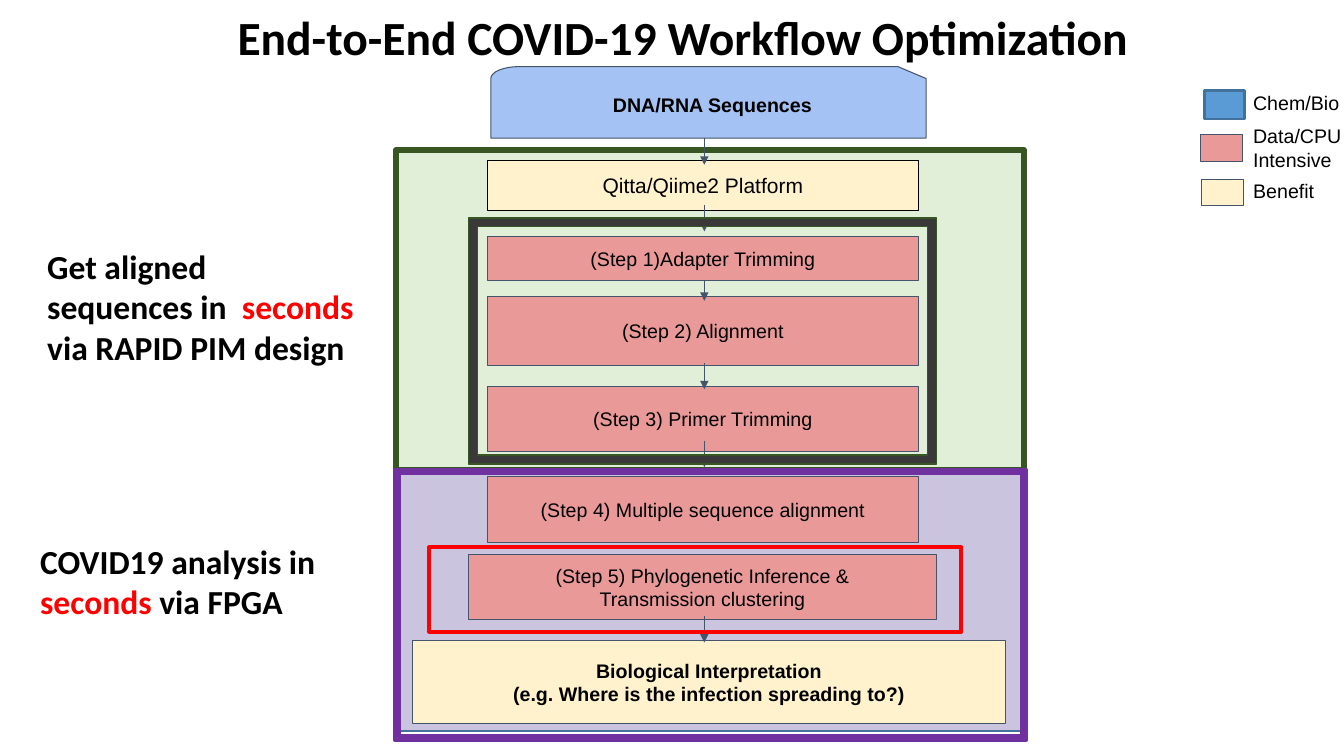
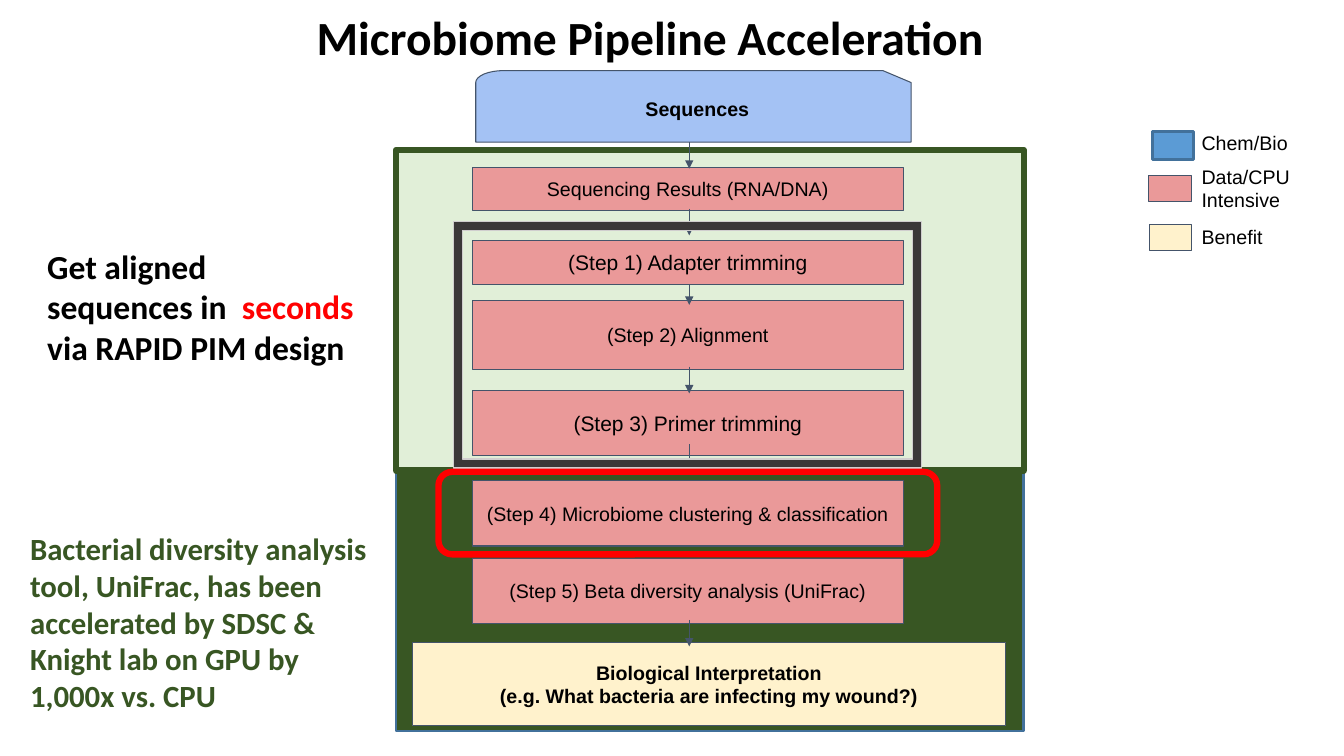
from dataclasses import dataclass
from math import cos, pi, sin

from lxml.etree import SubElement
from pptx import Presentation
from pptx.dml.color import RGBColor as Rgb
from pptx.enum.shapes import MSO_CONNECTOR as Link, MSO_SHAPE as Form
from pptx.enum.text import MSO_ANCHOR as Anchor, PP_ALIGN as Align
from pptx.oxml.ns import qn
from pptx.util import Cm, Pt


@dataclass(frozen=True)
class Theme:
    ink: str = "000000"
    red: str = "FF0000"
    edge: str = "44546A"
    blue: str = "5B9BD5"
    navy: str = "42719B"
    sky: str = "A4C2F4"
    rose: str = "EA9999"
    cream: str = "FFF2CC"
    mint: str = "E1EFD8"
    moss: str = "385623"
    lilac: str = "CBC4DE"
    plum: str = "7030A0"
    coal: str = "3A3838"
    ash: str = "D0CECE"
    head: str = "Calibri"
    body: str = "Arial"
    title: float = 34
    note: float = 24
    small: float = 22
    large: float = 15
    text: float = 14
    thin: float = 0.75


T = Theme()


@dataclass(frozen=True)
class Box:
    """Left, top, width and height in centimetres."""
    x: float
    y: float
    w: float
    h: float

    def move(self, dx: float, dy: float) -> "Box":
        return Box(self.x + dx, self.y + dy, self.w, self.h)

    def size(self) -> tuple[Cm, Cm, Cm, Cm]:
        return Cm(self.x), Cm(self.y), Cm(self.w), Cm(self.h)


@dataclass(frozen=True)
class Run:
    text: str
    tint: str = T.ink


@dataclass(frozen=True)
class Style:
    size: float = T.text
    font: str = T.body
    bold: bool = False
    align: Align = Align.CENTER
    anchor: Anchor = Anchor.MIDDLE
    pad: tuple[float, float, float, float] = (0.33, 0.33, 0.33, 0.33)
    lead: float = 1.0


@dataclass(frozen=True)
class Look:
    fill: str | None = T.rose
    line: str = T.edge
    width: float = T.thin


@dataclass(frozen=True)
class Step:
    box: Box
    text: str
    look: Look = Look()
    style: Style = Style()


@dataclass(frozen=True)
class Note:
    box: Box
    runs: tuple[Run, ...]
    size: float = T.note


@dataclass(frozen=True)
class Key:
    box: Box
    top: float
    text: str
    look: Look


@dataclass(frozen=True)
class Ring:
    box: Box
    form: Form
    look: Look
    bend: float | None = None


@dataclass(frozen=True)
class Flow:
    title: str
    span: float
    shift: tuple[float, float]
    card: str
    base: str
    steps: tuple[Step, ...]
    first: Step
    rings: tuple[Ring, ...]
    mark: Ring
    notes: tuple[Note, ...]
    move: tuple[float, float] = (0, 0)
    drop: float = 0


BOLD = Style(bold=True)
BIG = Style(size=T.large)
CREAM = Look(T.cream)
TITLE = Style(T.title, T.head, True, pad=(0.18,) * 4, lead=0.9)
LABEL = Style(align=Align.LEFT, anchor=Anchor.TOP, pad=(0.13, 0.13, 0, 0.13))
CARD = Style(bold=True, pad=(0.53, 0.46, 0.33, 0.33))

UPPER = Box(9.98, 3.78, 15.82, 8.08)
LOWER = Box(9.98, 11.89, 15.82, 6.53)
ARROWS = (3.48, 5.16, 6.91, 9.14, 11.1, 15.52)
KEYS = (
    Key(Box(30.35, 2.29, 1.02, 0.71), 2.16, "Chem/Bio", Look(T.blue, T.navy, 2)),
    Key(Box(30.25, 3.4, 1.07, 0.66), 3.0, "Data/CPU\nIntensive", Look()),
    Key(Box(30.27, 4.52, 1.07, 0.66), 4.39, "Benefit", CREAM),
)
SPEED = Note(Box(0.94, 6.07, 8.28, 2.26), (
    Run("Get aligned sequences in  "), Run("seconds ", T.red),
    Run("via RAPID PIM design")))


def row(top: float, high: float) -> Box:
    return Box(12.29, top, 10.85, high)


def trim(line: str) -> Ring:
    """Dark frame around the trimming and alignment steps."""
    return Ring(Box(11.81, 5.49, 11.79, 6.2), Form.FRAME,
                Look(T.coal, line, 1), 0.036)


def final(query: str) -> Step:
    return Step(Box(10.39, 16.13, 14.96, 2.11),
                f"Biological Interpretation\n(e.g. {query})", CREAM, BOLD)


FLOWS = (
    Flow(
        "End-to-End COVID-19 Workflow Optimization", 28.52, (0, 0),
        "DNA/RNA Sequences", T.lilac,
        (
            Step(row(4.04, 1.27), "Qitta/Qiime2 Platform", Look(T.cream, T.ink), BIG),
            Step(row(7.47, 1.75), "(Step 2) Alignment"),
            Step(row(9.73, 1.65), "(Step 3) Primer Trimming"),
            Step(row(12.01, 1.65), "(Step 4) Multiple sequence alignment"),
            Step(Box(11.81, 13.97, 11.79, 1.65),
                 "(Step 5) Phylogenetic Inference &\nTransmission clustering"),
            final("Where is the infection spreading to?"),
        ),
        Step(row(5.97, 1.09), "(Step 1)Adapter Trimming"),
        (trim(T.moss), Ring(Box(9.96, 11.84, 15.9, 6.81), Form.FRAME,
                            Look(T.lilac, T.plum, 3), 0.013)),
        Ring(Box(10.82, 13.79, 13.41, 2.13), Form.RECTANGLE, Look(None, T.red, 3)),
        (SPEED, Note(Box(0.76, 13.49, 8.28, 2.26), (
            Run("COVID19 analysis in "), Run("seconds ", T.red), Run("via FPGA")))),
    ),
    Flow(
        "Microbiome Pipeline Acceleration", 26.87, (-0.38, 0.1),
        "Sequences", T.moss,
        (
            Step(row(4.12, 1.09), "Sequencing Results (RNA/DNA)"),
            Step(row(7.47, 1.75), "(Step 2) Alignment"),
            Step(row(9.73, 1.65), "(Step 3) Primer trimming", style=BIG),
            Step(row(12.01, 1.65), "(Step 4) Microbiome clustering & classification"),
            Step(row(13.97, 1.65), "(Step 5) Beta diversity analysis (UniFrac)"),
            final("What bacteria are infecting my wound?"),
        ),
        Step(row(5.97, 1.09), "(Step 1) Adapter trimming", style=BIG),
        (trim(T.ash),),
        Ring(Box(11.05, 11.89, 12.57, 2.08), Form.ROUNDED_RECTANGLE,
             Look(None, T.red, 4.5), 0.167),
        (SPEED, Note(Box(0.51, 13.21, 9.35, 4.62), (
            Run("Bacterial diversity analysis tool, UniFrac, has been accelerated "
                "by SDSC & Knight lab on GPU by 1,000x vs. CPU", T.moss),), T.small)),
        (-1.3, 1.02), 0.12,
    ),
)


def paint(shape, look: Look) -> None:
    shape.shadow.inherit = False
    if look.fill:
        shape.fill.solid()
        shape.fill.fore_color.rgb = Rgb.from_string(look.fill)
    else:
        shape.fill.background()
    shape.line.color.rgb = Rgb.from_string(look.line)
    shape.line.width = Pt(look.width)


def write(shape, paras: list[tuple[Run, ...]], style: Style) -> None:
    frame = shape.text_frame
    frame.word_wrap = True
    frame.vertical_anchor = style.anchor
    (frame.margin_left, frame.margin_top,
     frame.margin_right, frame.margin_bottom) = map(Cm, style.pad)
    for i, runs in enumerate(paras):
        para = frame.add_paragraph() if i else frame.paragraphs[0]
        para.alignment = style.align
        para.line_spacing = style.lead
        for part in runs:
            run = para.add_run()
            run.text = part.text
            run.font.name = style.font
            run.font.size = Pt(style.size)
            run.font.bold = style.bold
            run.font.color.rgb = Rgb.from_string(part.tint)


def split(text: str) -> list[tuple[Run, ...]]:
    """One paragraph of one run for each line."""
    return [(Run(line),) for line in text.split("\n")]


def block(slide, box: Box, look: Look, form: Form = Form.RECTANGLE):
    shape = slide.shapes.add_shape(form, *box.size())
    paint(shape, look)
    return shape


def label(slide, box: Box, paras: list[tuple[Run, ...]], style: Style) -> None:
    write(slide.shapes.add_textbox(*box.size()), paras, style)


def card(slide, box: Box, text: str) -> None:
    """Card with an oval left corner and a cut right corner."""
    wide, high = 0.71, 0.3
    end, base = box.x + box.w, box.y + box.h
    arc = [(box.x + wide * (1 - cos(i * pi / 16)),
            box.y + high * (1 - sin(i * pi / 16))) for i in range(9)]
    rest = [(end - wide, box.y), (end, box.y + high), (end, base), (box.x, base)]
    start, *points = [(Cm(x), Cm(y)) for x, y in arc + rest]
    pen = slide.shapes.build_freeform(*start)
    pen.add_line_segments(points)
    shape = pen.convert_to_shape()
    paint(shape, Look(T.sky))
    write(shape, split(text), CARD)


def arrow(slide, x: float, y: float) -> None:
    line = slide.shapes.add_connector(Link.STRAIGHT, Cm(x), Cm(y), Cm(x), Cm(y + 0.67))
    line.line.color.rgb = Rgb.from_string(T.edge)
    line.line.width = Pt(T.thin)
    props = line.element.spPr
    SubElement(props.find(qn("a:ln")), qn("a:tailEnd"), type="triangle")
    SubElement(props, qn("a:effectLst"))


def place(slide, step: Step, shift: tuple[float, float]) -> None:
    shape = block(slide, step.box.move(*shift), step.look)
    write(shape, split(step.text), step.style)


def ring(slide, item: Ring, shift: tuple[float, float] = (0, 0)) -> None:
    shape = block(slide, item.box.move(*shift), item.look, item.form)
    if item.bend is not None:
        shape.adjustments[0] = item.bend


def legend(slide, flow: Flow) -> None:
    for i, key in enumerate(KEYS):
        dx, dy = flow.move
        dy += flow.drop if i == len(KEYS) - 1 else 0
        block(slide, key.box.move(dx, dy), key.look)
        lines = split(key.text)
        box = Box(31.45, key.top, 2.4, 0.27 + 0.55 * len(lines))
        label(slide, box.move(dx, dy), lines, LABEL)


def draw(slide, flow: Flow) -> None:
    block(slide, LOWER, Look(flow.base, T.navy, 2))
    block(slide, UPPER, Look(T.mint, T.moss, 4.5))
    label(slide, Box(2.95, 0.08, flow.span, 1.88), split(flow.title), TITLE)
    card(slide, Box(12.37, 1.68, 10.97, 1.8).move(*flow.shift), flow.card)
    *steps, last = flow.steps
    for step in steps:
        place(slide, step, flow.shift)
    place(slide, last, (0, flow.shift[1] / 2))
    dx, dy = flow.shift
    for top in ARROWS:
        arrow(slide, 17.75 + dx, top + dy)
    legend(slide, flow)
    trims, *outer = flow.rings
    ring(slide, trims, flow.shift)
    for item in outer:
        ring(slide, item)
    place(slide, flow.first, flow.shift)
    for note in flow.notes:
        style = Style(note.size, T.head, True, Align.LEFT, Anchor.TOP,
                      (0.25, 0.13, 0.25, 0.13))
        label(slide, note.box, [note.runs], style)
    ring(slide, flow.mark)


def main() -> None:
    deck = Presentation()
    deck.slide_width, deck.slide_height = Cm(33.87), Cm(19.05)
    for flow in FLOWS:
        draw(deck.slides.add_slide(deck.slide_layouts[6]), flow)
    deck.save("out.pptx")


if __name__ == "__main__":
    main()
